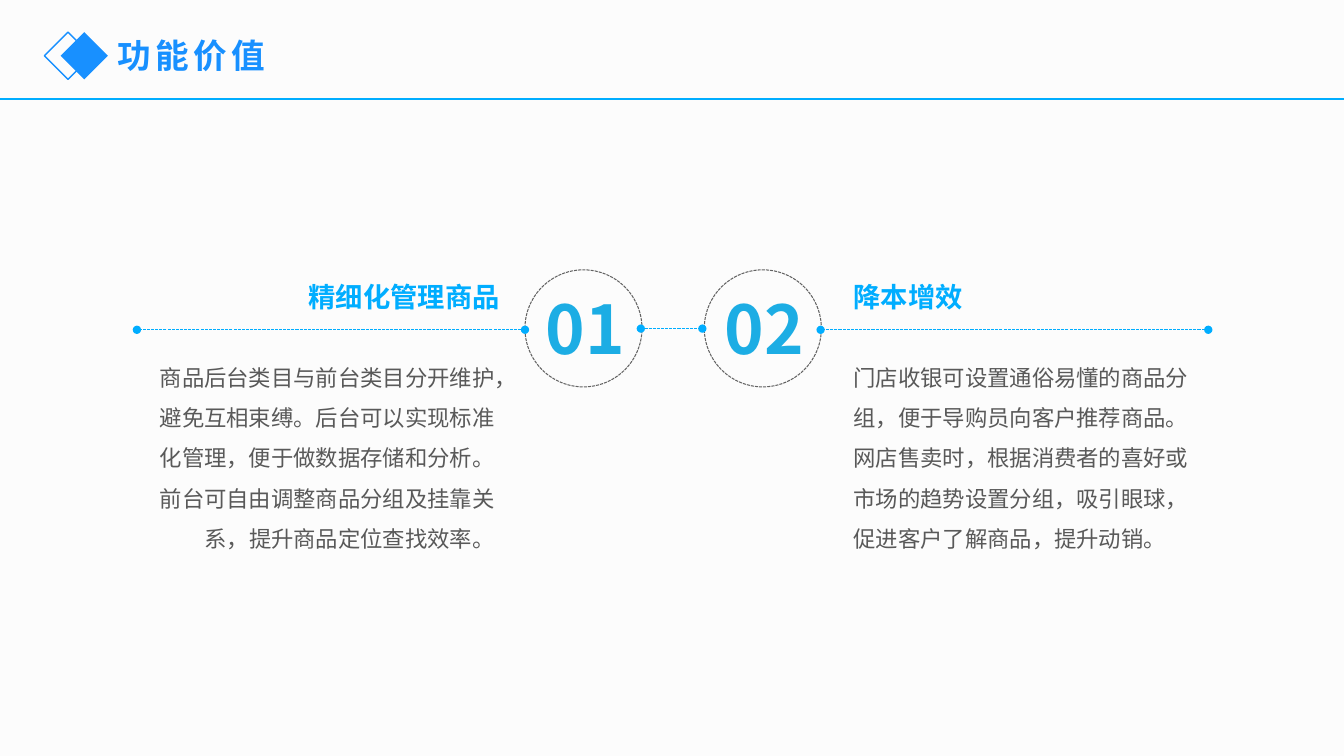
from lxml import etree
from pptx import Presentation
from pptx.dml.color import RGBColor
from pptx.enum.dml import MSO_LINE
from pptx.enum.shapes import MSO_CONNECTOR, MSO_SHAPE
from pptx.enum.text import PP_ALIGN
from pptx.oxml.ns import qn
from pptx.util import Cm, Pt

LEFT, RIGHT = PP_ALIGN.LEFT, PP_ALIGN.RIGHT
DASH = MSO_LINE.SQUARE_DOT
FONT = "Noto Sans CJK SC"
SKY, BLUE, TEAL, GRAY, RING = "00ADFF", "1890FF", "1CADE4", "595959", "626262"


def color(code):
    return RGBColor.from_string(code)


def write(text, box, size, code, bold=False, align=LEFT, lead=1.0, gap=0):
    """Add a wrapped text box; box is in cm, gap is letter spacing in points."""
    frame = slide.shapes.add_textbox(*map(Cm, box)).text_frame
    frame.word_wrap = True
    para = frame.paragraphs[0]
    para.alignment, para.line_spacing = align, lead
    run = para.add_run()
    run.text = text
    look = {"name": FONT, "size": Pt(size), "bold": bold}
    for key, value in look.items():
        setattr(run.font, key, value)
    run.font.color.rgb = color(code)
    props = run._r.get_or_add_rPr()
    etree.SubElement(props, qn("a:ea"), typeface=FONT)
    if gap:
        props.set("spc", str(gap * 100))


prs = Presentation()
prs.slide_width, prs.slide_height = Cm(33.87), Cm(19.05)
slide = prs.slides.add_slide(prs.slide_layouts[6])
slide.background.fill.solid()
slide.background.fill.fore_color.rgb = color("FCFCFC")

# Header diamonds and title
for left, solid in ((1.12, False), (1.53, True)):
    mark = slide.shapes.add_shape(
        MSO_SHAPE.DIAMOND, Cm(left), Cm(0.81), Cm(1.19), Cm(1.19))
    mark.shadow.inherit = False
    if solid:
        mark.fill.solid()
        mark.fill.fore_color.rgb = color(BLUE)
        mark.line.fill.background()
    else:
        mark.fill.background()
        mark.line.color.rgb = color(BLUE)
        mark.line.width = Pt(1)
write("功能价值", (2.72, 0.76, 13.94, 1.27), 24, BLUE, bold=True, gap=3)

# Two numbered points: circle, number, heading, body
points = [
    ("01", 13.23, 13.51, "精细化管理商品", (6.25, 6.6), 3.72, RIGHT,
     "商品后台类目与前台类目分开维护，避免互相束缚。后台可以实现标准化管理，"
     "便于做数据存储和分析。前台可自由调整商品分组及挂靠关系，提升商品定位查找效率。"),
    ("02", 17.75, 18.01, "降本增效", (21.26, 4.17), 21.26, LEFT,
     "门店收银可设置通俗易懂的商品分组，便于导购员向客户推荐商品。 "
     "网店售卖时，根据消费者的喜好或市场的趋势设置分组，吸引眼球，"
     "促进客户了解商品，提升动销。"),
]
for number, ring_x, num_x, head, (head_x, head_w), body_x, align, body in points:
    write(number, (num_x, 7.11, 2.95, 2.51), 48, TEAL, bold=True)
    write(head, (head_x, 6.93, head_w, 1.12), 19.5, SKY, bold=True, align=align)
    write(body, (body_x, 8.71, 9, 7.16), 16, GRAY, align=align, lead=1.5)
    ring = slide.shapes.add_shape(
        MSO_SHAPE.OVAL, Cm(ring_x), Cm(6.8), Cm(2.95), Cm(2.95))
    ring.shadow.inherit = False
    ring.fill.background()
    ring.line.color.rgb = color(RING)
    ring.line.width, ring.line.dash_style = Pt(0.75), DASH

# Header rule, then the dotted links with round ends
links = [
    (-0.23, 34.06, 2.49, 1, False),
    (16.15, 17.7, 8.28, 0.75, True),
    (30.45, 20.68, 8.31, 0.75, True),
    (13.23, 3.45, 8.31, 0.75, True),
]
for start, end, top, width, dotted in links:
    link = slide.shapes.add_connector(
        MSO_CONNECTOR.STRAIGHT, Cm(start), Cm(top), Cm(end), Cm(top))
    link.line.color.rgb = color(SKY)
    link.line.width = Pt(width)
    if dotted:
        link.line.dash_style = DASH
        stroke = link.line._get_or_add_ln()
        for tag in ("a:headEnd", "a:tailEnd"):
            etree.SubElement(stroke, qn(tag), type="oval")
    etree.SubElement(link._element.spPr, qn("a:effectLst"))

prs.save("out.pptx")
